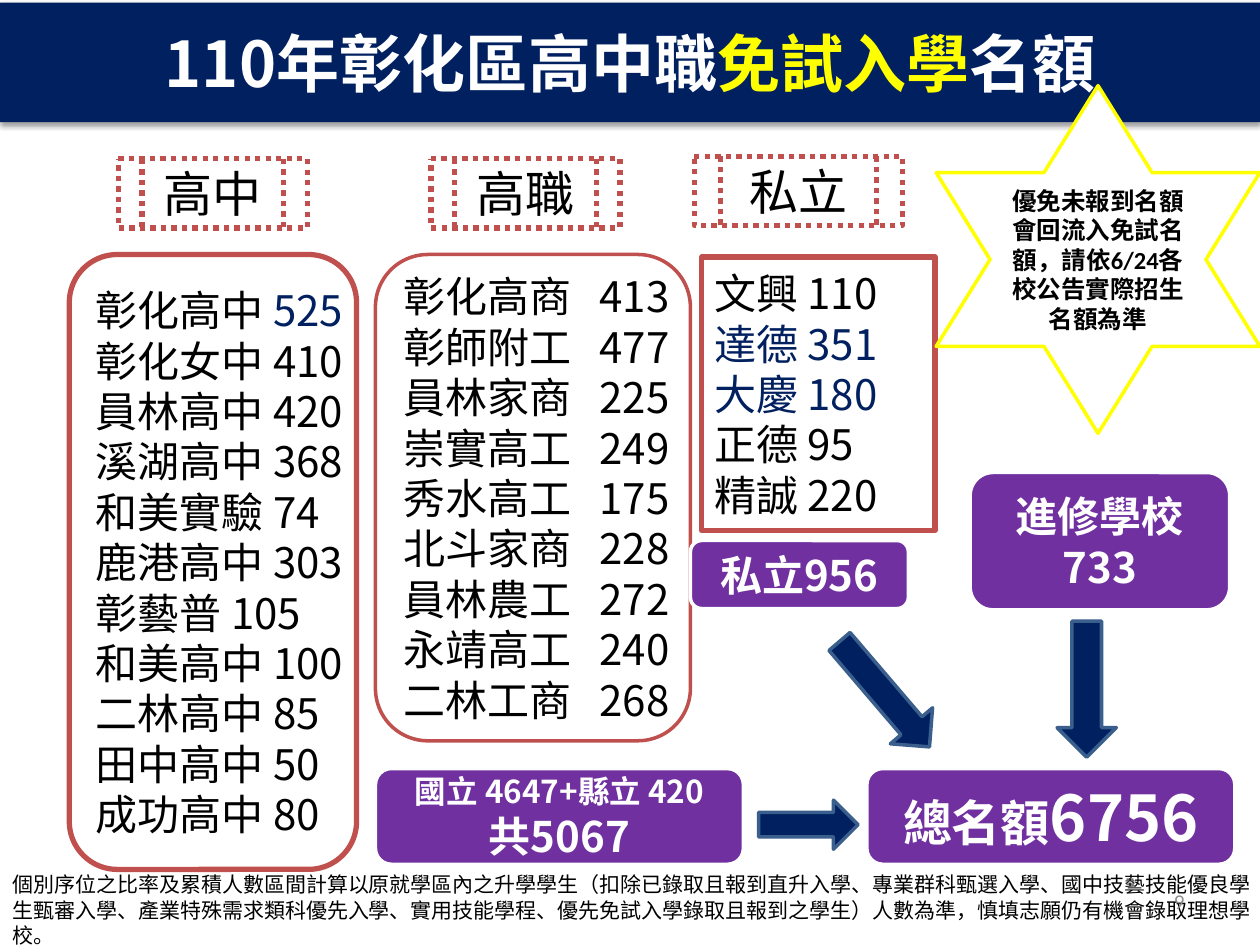
from dataclasses import dataclass

from lxml.etree import SubElement
from pptx import Presentation
from pptx.dml.color import RGBColor
from pptx.enum.dml import MSO_LINE
from pptx.enum.shapes import MSO_SHAPE
from pptx.enum.text import MSO_ANCHOR, MSO_AUTO_SIZE, PP_ALIGN
from pptx.oxml.ns import qn
from pptx.util import Inches, Pt


@dataclass(frozen=True)
class Theme:
    font: str = "Noto Sans CJK SC"
    latin: str = "Calibri"
    navy: str = "002060"
    purple: str = "7030A0"
    red: str = "C0504D"
    yellow: str = "FFFF00"
    white: str = "FFFFFF"
    black: str = "000000"
    gray: str = "8C8C8C"
    arrow_edge: str = "3A5F8C"
    title: int = 36
    heading: int = 28
    body: int = 24
    detail: int = 18
    callout: int = 14
    note: int = 12
    line_height: float = 1.2


THEME = Theme()

SENIOR_HIGH = [
    ("彰化高中", 525), ("彰化女中", 410), ("員林高中", 420), ("溪湖高中", 368),
    ("和美實驗", 74), ("鹿港高中", 303), ("彰藝普", 105), ("和美高中", 100),
    ("二林高中", 85), ("田中高中", 50), ("成功高中", 80),
]
VOCATIONAL = [
    ("彰化高商", 413), ("彰師附工", 477), ("員林家商", 225), ("崇實高工", 249),
    ("秀水高工", 175), ("北斗家商", 228), ("員林農工", 272), ("永靖高工", 240),
    ("二林工商", 268),
]
PRIVATE = [("文興", 110), ("達德", 351), ("大慶", 180), ("正德", 95), ("精誠", 220)]

NOTE = (
    "個別序位之比率及累積人數區間計算以原就學區內之升學學生（扣除已錄取且報到直升入學、"
    "專業群科甄選入學、國中技藝技能優良學生甄審入學、產業特殊需求類科優先入學、實用技能學程、"
    "優先免試入學錄取且報到之學生）人數為準，慎填志願仍有機會錄取理想學校。"
)
CALLOUT = "優免未報到名額會回流入免試名額，請依6/24各校公告實際招生名額為準"


def rgb(color):
    return RGBColor.from_string(color)


def write(shape, lines, align=PP_ALIGN.CENTER, bold=False, wrap=True,
          font=THEME.font, anchor=MSO_ANCHOR.MIDDLE, tab=None):
    frame = shape.text_frame
    frame.word_wrap = wrap
    frame.auto_size = MSO_AUTO_SIZE.NONE
    frame.vertical_anchor = anchor
    for index, line in enumerate(lines):
        paragraph = frame.add_paragraph() if index else frame.paragraphs[0]
        if tab:
            stops = SubElement(paragraph._p.get_or_add_pPr(), qn("a:tabLst"))
            SubElement(stops, qn("a:tab"), pos=str(Inches(tab)), algn="l")
        paragraph.alignment = align
        paragraph.line_spacing = Pt(max(size for _, size, _ in line) * THEME.line_height)
        for text, size, color in line:
            run = paragraph.add_run()
            run.text = text
            run.font.name = font
            run.font.size = Pt(size)
            run.font.bold = bold
            run.font.color.rgb = rgb(color)
            SubElement(run._r.get_or_add_rPr(), qn("a:ea"), typeface=THEME.font)


def add_box(slide, preset, box, fill=None, edge=None, width=2):
    shape = slide.shapes.add_shape(preset, *map(Inches, box))
    shape.shadow.inherit = False
    if fill:
        shape.fill.solid()
        shape.fill.fore_color.rgb = rgb(fill)
    else:
        shape.fill.background()
    shape.line.color.rgb = rgb(edge)
    shape.line.width = Pt(width)
    return shape


def add_title(slide):
    title = slide.shapes.title
    title.left, title.top, title.width, title.height = map(Inches, (0, 0.02, 10, 0.95))
    properties = title._element.spPr
    geometry = SubElement(properties, qn("a:prstGeom"), prst="roundRect")
    SubElement(geometry, qn("a:avLst"))
    title.fill.solid()
    title.fill.fore_color.rgb = rgb(THEME.navy)
    effects = SubElement(properties, qn("a:effectLst"))
    shadow = SubElement(effects, qn("a:outerShdw"), blurRad=str(Pt(3.1)),
                        dist=str(Pt(1.6)), dir="5400000", rotWithShape="0")
    shade = SubElement(shadow, qn("a:srgbClr"), val=THEME.black)
    SubElement(shade, qn("a:alpha"), val="38000")
    write(title, [[("110年彰化區高中職", THEME.title, THEME.white),
                   ("免試入學", THEME.title, THEME.yellow),
                   ("名額", THEME.title, THEME.white)]], bold=True)


def add_heading(slide, text, box):
    heading = add_box(slide, MSO_SHAPE.FLOWCHART_PREDEFINED_PROCESS, box,
                      edge=THEME.red, width=3)
    heading.line.dash_style = MSO_LINE.ROUND_DOT
    write(heading, [[(text, THEME.heading, THEME.black)]], wrap=False)


def add_school_list(slide, preset, box, schools, width=3, blue_names=(),
                    blue_quotas=(), tab=None):
    panel = add_box(slide, preset, box, edge=THEME.red, width=width)
    gap = "\t" if tab else " "
    lines = []
    for school, quota in schools:
        name_color = THEME.navy if school in blue_names else THEME.black
        quota_color = THEME.navy if school in blue_quotas else name_color
        if name_color == quota_color:
            lines.append([(f"{school}{gap}{quota}", THEME.body, name_color)])
        else:
            lines.append([(f"{school}{gap}", THEME.body, name_color),
                          (str(quota), THEME.body, quota_color)])
    write(panel, lines, align=PP_ALIGN.LEFT, wrap=False, tab=tab)


def add_total(slide, box, *lines):
    total = add_box(slide, MSO_SHAPE.ROUNDED_RECTANGLE, box, THEME.purple, THEME.white)
    write(total, [[(text, size, THEME.white) for text, size in line] for line in lines],
          bold=True)


def add_arrow(slide, preset, box, rotation=0):
    arrow = add_box(slide, preset, box, THEME.navy, THEME.arrow_edge)
    arrow.rotation = rotation


def add_label(slide, box, text, color, **style):
    label = slide.shapes.add_textbox(*map(Inches, box))
    write(label, [[(text, THEME.note, color)]], **style)


def main():
    presentation = Presentation()
    presentation.slide_width, presentation.slide_height = Inches(10), Inches(7.5)
    slide = presentation.slides.add_slide(presentation.slide_layouts[5])
    add_title(slide)

    add_heading(slide, "高中", (0.94, 1.26, 1.5, 0.55))
    add_heading(slide, "高職", (3.42, 1.26, 1.5, 0.55))
    add_heading(slide, "私立", (5.51, 1.24, 1.65, 0.55))

    rounded = MSO_SHAPE.FLOWCHART_ALTERNATE_PROCESS
    add_school_list(slide, rounded, (0.55, 2.02, 2.28, 4.88), SENIOR_HIGH,
                    blue_quotas=("彰化高中",))
    add_school_list(slide, rounded, (2.98, 2.02, 2.5, 3.86), VOCATIONAL,
                    width=2, tab=1.56)
    add_school_list(slide, MSO_SHAPE.RECTANGLE, (5.57, 2.04, 1.85, 2.17), PRIVATE,
                    blue_names=("達德", "大慶"))

    add_label(slide, (0, 6.87, 10.12, 0.71), NOTE, THEME.black,
              align=PP_ALIGN.LEFT, anchor=MSO_ANCHOR.TOP)
    add_label(slide, (7.17, 6.95, 2.33, 0.4), "9", THEME.gray,
              align=PP_ALIGN.RIGHT, font=THEME.latin)

    add_total(slide, (2.98, 6.1, 2.92, 0.76),
              [("國立 4647+縣立 420", THEME.detail)], [("共5067", THEME.body)])
    add_total(slide, (5.48, 4.29, 1.73, 0.54), [("私立956", THEME.body)])
    add_total(slide, (7.7, 3.75, 2.06, 1.09), [("進修學校733", THEME.body)])
    add_total(slide, (6.88, 6.1, 2.92, 0.76),
              [("總名額", THEME.heading), ("6756", THEME.title)])

    add_arrow(slide, MSO_SHAPE.RIGHT_ARROW, (6.02, 6.35, 0.79, 0.39))
    add_arrow(slide, MSO_SHAPE.DOWN_ARROW, (8.39, 4.93, 0.47, 1.08))
    add_arrow(slide, MSO_SHAPE.RIGHT_ARROW, (6.47, 5.29, 1.1, 0.44), rotation=49.5)

    star = add_box(slide, MSO_SHAPE.STAR_6_POINT, (7.43, 0.68, 2.57, 2.76),
                   THEME.white, THEME.yellow)
    write(star, [[(CALLOUT, THEME.callout, THEME.black)]], bold=True, font=THEME.latin)

    presentation.save("out.pptx")


if __name__ == "__main__":
    main()
